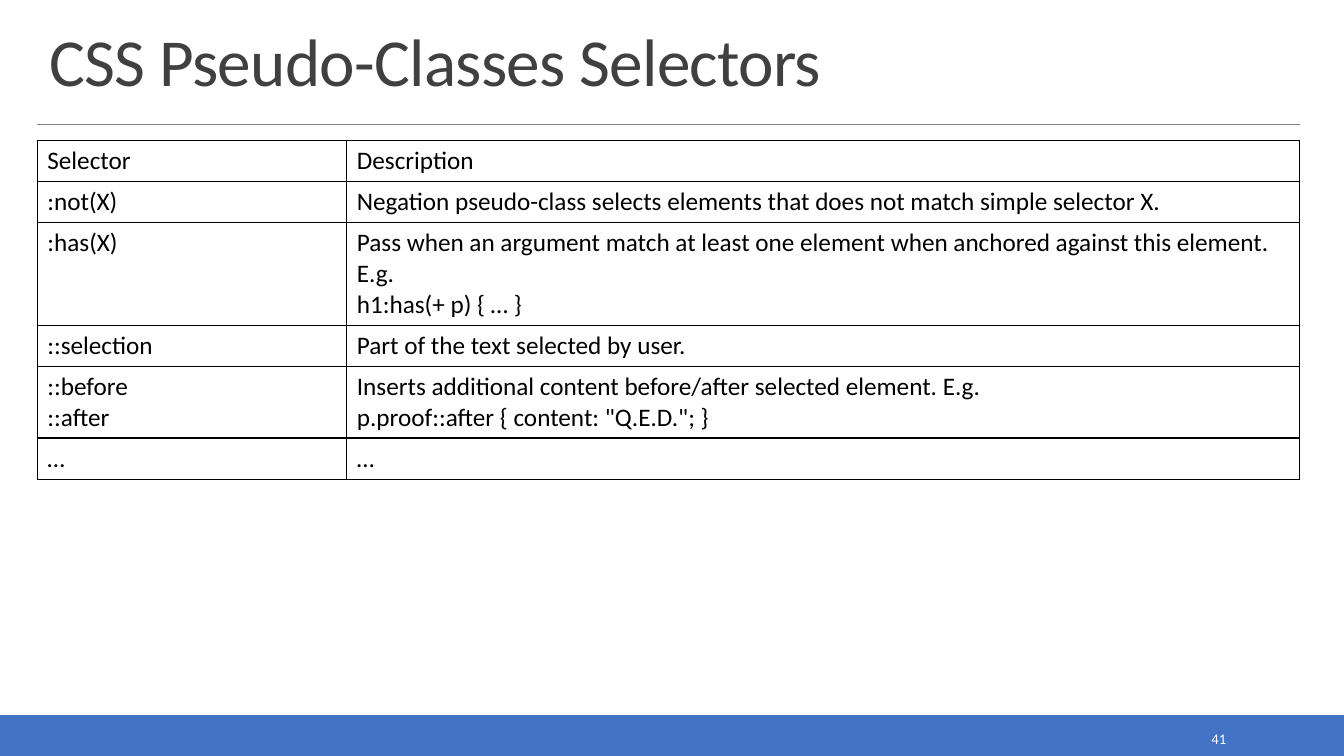
"""Build a slide with a table of CSS pseudo-class selectors."""
from dataclasses import dataclass

from lxml import etree
from pptx import Presentation
from pptx.dml.color import RGBColor
from pptx.enum.shapes import MSO_CONNECTOR, MSO_SHAPE
from pptx.enum.text import MSO_ANCHOR, PP_ALIGN
from pptx.oxml.ns import qn
from pptx.util import Inches, Pt

RECT = MSO_SHAPE.RECTANGLE
LINE = MSO_CONNECTOR.STRAIGHT
LEFT, RIGHT = PP_ALIGN.LEFT, PP_ALIGN.RIGHT
MIDDLE, BOTTOM = MSO_ANCHOR.MIDDLE, MSO_ANCHOR.BOTTOM
FONT = "Calibri"
COLORS = {"bar": "4472C4", "rule": "808080", "title": "404040",
          "text": "000000", "page": "FFFFFF"}
WIDTHS = (3.07, 9.45)
EDGES = ("a:lnL", "a:lnR", "a:lnT", "a:lnB")


@dataclass
class Label:
    text: str
    box: tuple[float, float, float, float]
    size: float
    color: str
    anchor: MSO_ANCHOR
    align: PP_ALIGN = LEFT
    lead: float = 1.0
    track: int = 0


@dataclass
class Entry:
    name: str
    note: str
    height: float = 0.41


LABELS = (
    Label("CSS Pseudo-Classes Selectors", (0.39, 0.2, 12.52, 0.84), 48,
          "title", BOTTOM, lead=0.85, track=-50),
    Label("41", (10.83, 7.19, 1.43, 0.28), 10.5, "page", MIDDLE, RIGHT),
)
ENTRIES = (
    Entry("Selector", "Description"),
    Entry(":not(X)", "Negation pseudo-class selects elements that does not "
          "match simple selector X."),
    Entry(":has(X)", "Pass when an argument match at least one element when "
          "anchored against this element. E.g.\vh1:has(+ p) { … }", 1.01),
    Entry("::selection", "Part of the text selected by user."),
    Entry("::before\n::after", "Inserts additional content before/after "
          "selected element. E.g.\vp.proof::after { content: \"Q.E.D.\"; }",
          0.71),
    Entry("…", "…"),
)


def rgb(name: str) -> RGBColor:
    return RGBColor.from_string(COLORS[name])


def style(para, size: float, color: str) -> None:
    para.font.name = FONT
    para.font.size = Pt(size)
    para.font.color.rgb = rgb(color)


def add_bar(slide) -> None:
    bar = slide.shapes.add_shape(
        RECT, 0, Inches(7.1), Inches(13.33), Inches(0.4))
    bar.shadow.inherit = False
    bar.fill.solid()
    bar.fill.fore_color.rgb = rgb("bar")
    bar.line.color.rgb = rgb("bar")
    bar.line.width = Pt(1.25)


def add_rule(slide) -> None:
    rule = slide.shapes.add_connector(
        LINE, Inches(0.37), Inches(1.23), Inches(12.89), Inches(1.23))
    rule.line.color.rgb = rgb("rule")
    rule.line.width = Pt(0.5)
    etree.SubElement(rule._element.spPr, qn("a:effectLst"))


def add_label(slide, label: Label) -> None:
    frame = slide.shapes.add_textbox(*map(Inches, label.box)).text_frame
    frame.word_wrap = True
    frame.vertical_anchor = label.anchor
    para = frame.paragraphs[0]
    para.text = label.text
    para.alignment = label.align
    para.line_spacing = label.lead
    style(para, label.size, label.color)
    if label.track:
        para.runs[0]._r.get_or_add_rPr().set("spc", str(label.track))


def add_edges(cell) -> None:
    props = cell._tc.get_or_add_tcPr()
    for tag in EDGES:
        edge = etree.SubElement(props, qn(tag), w=str(Pt(1)))
        fill = etree.SubElement(edge, qn("a:solidFill"))
        etree.SubElement(fill, qn("a:srgbClr"), val=COLORS["text"])


def add_cell(cell, text: str) -> None:
    cell.text = text
    add_edges(cell)
    cell.fill.background()
    for para in cell.text_frame.paragraphs:
        style(para, 18, "text")


def add_grid(slide) -> None:
    high = sum(entry.height for entry in ENTRIES)
    grid = slide.shapes.add_table(
        len(ENTRIES), len(WIDTHS), Inches(0.37), Inches(1.39),
        Inches(sum(WIDTHS)), Inches(high)).table
    grid.first_row = False
    grid.horz_banding = False
    for col, width in zip(grid.columns, WIDTHS):
        col.width = Inches(width)
    for row, entry in zip(grid.rows, ENTRIES):
        row.height = Inches(entry.height)
        for cell, text in zip(row.cells, (entry.name, entry.note)):
            add_cell(cell, text)


def main() -> None:
    deck = Presentation()
    deck.slide_width = Inches(13.33)
    deck.slide_height = Inches(7.5)
    slide = deck.slides.add_slide(deck.slide_layouts[6])
    add_bar(slide)
    add_rule(slide)
    add_grid(slide)
    for label in LABELS:
        add_label(slide, label)
    deck.save("out.pptx")


if __name__ == "__main__":
    main()
